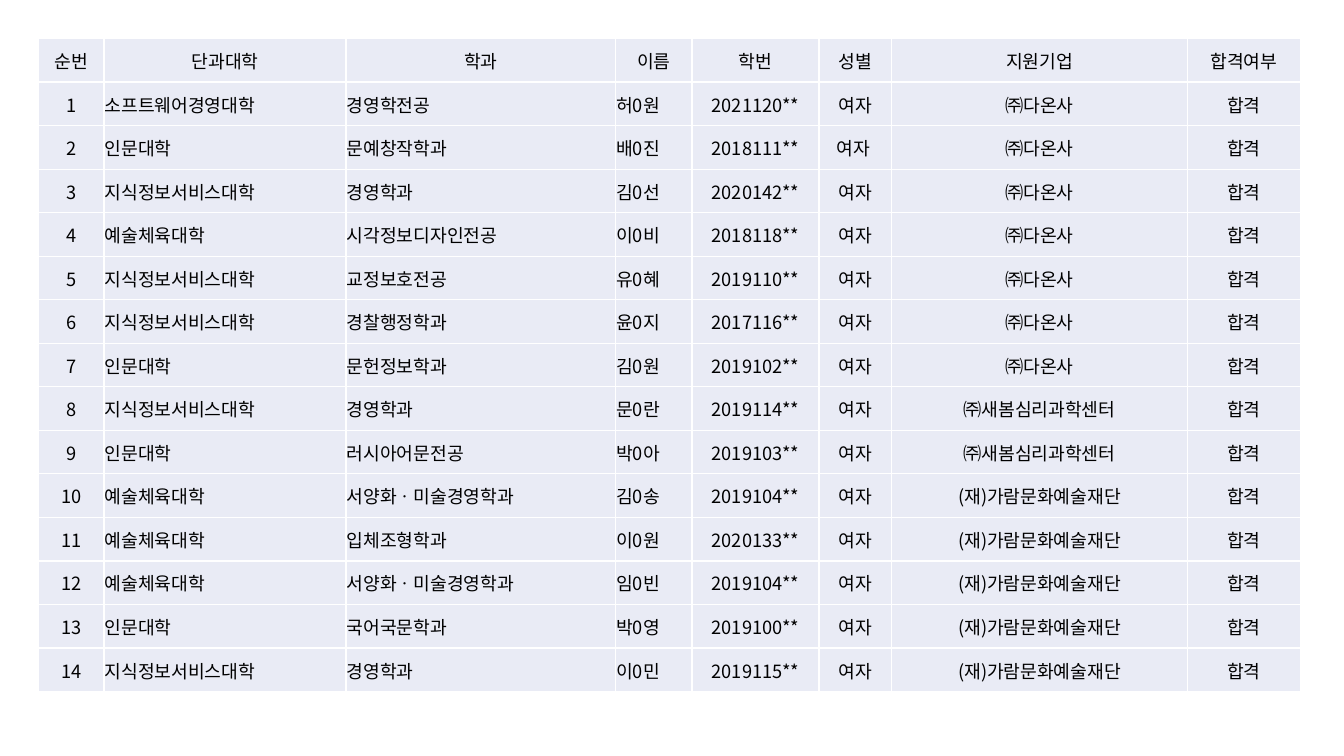
from lxml import etree
from pptx import Presentation
from pptx.dml.color import RGBColor as RGB
from pptx.enum.text import MSO_ANCHOR as Anchor, PP_ALIGN as Align
from pptx.oxml.ns import qn
from pptx.util import Cm, Pt

FONT = "Noto Sans CJK KR"
COLORS = {"cell": "E9EBF5", "text": "000000", "border": "FFFFFF"}

# Table geometry in centimetres
LEFT, TOP, HEIGHT = 0.97, 0.97, 16.46
COL_WIDTHS = [1.65, 6.1, 6.79, 1.93, 3.2, 1.83, 7.45, 2.85]
LEFT_ALIGNED = (1, 2, 3)

# Table content
HEADERS = ["순번", "단과대학", "학과", "이름", "학번", "성별", "지원기업", "합격여부"]
PRESS, CENTER, FOUNDATION = "㈜다온사", "㈜새봄심리과학센터", "(재)가람문화예술재단"
SOFTWARE, HUMANITIES = "소프트웨어경영대학", "인문대학"
SERVICE, ARTS = "지식정보서비스대학", "예술체육대학"
APPLICANTS = [
    (SOFTWARE, "경영학전공", "허0원", "2021120**", "여자", PRESS),
    (HUMANITIES, "문예창작학과", "배0진", "2018111**", "여자 ", PRESS),
    (SERVICE, "경영학과", "김0선", "2020142**", "여자", PRESS),
    (ARTS, "시각정보디자인전공", "이0비", "2018118**", "여자", PRESS),
    (SERVICE, "교정보호전공", "유0혜", "2019110**", "여자", PRESS),
    (SERVICE, "경찰행정학과", "윤0지", "2017116**", "여자", PRESS),
    (HUMANITIES, "문헌정보학과", "김0원", "2019102**", "여자", PRESS),
    (SERVICE, "경영학과", "문0란", "2019114**", "여자", CENTER),
    (HUMANITIES, "러시아어문전공", "박0아", "2019103**", "여자", CENTER),
    (ARTS, "서양화ㆍ미술경영학과", "김0송", "2019104**", "여자", FOUNDATION),
    (ARTS, "입체조형학과", "이0원", "2020133**", "여자", FOUNDATION),
    (ARTS, "서양화ㆍ미술경영학과", "임0빈", "2019104**", "여자", FOUNDATION),
    (HUMANITIES, "국어국문학과", "박0영", "2019100**", "여자", FOUNDATION),
    (SERVICE, "경영학과", "이0민", "2019115**", "여자", FOUNDATION),
]


def add_text(tf, text, size=13, color="text", align=Align.CENTER):
    p = tf.paragraphs[0]
    p.alignment = align
    r = p.add_run()
    r.text = text
    r.font.size = Pt(size)
    r.font.name = FONT
    r.font.color.rgb = RGB.from_string(COLORS[color])
    # East Asian typeface
    etree.SubElement(r.font._element, qn("a:ea"), typeface=FONT)


def set_borders(cell, color="border", width=1):
    tc_pr = cell._tc.get_or_add_tcPr()
    for i, side in enumerate(("lnL", "lnR", "lnT", "lnB")):
        ln = etree.Element(qn(f"a:{side}"), w=str(Pt(width)))
        fill = etree.SubElement(ln, qn("a:solidFill"))
        etree.SubElement(fill, qn("a:srgbClr"), val=COLORS[color])
        tc_pr.insert(i, ln)


def format_cell(cell, text, align):
    cell.fill.solid()
    cell.fill.fore_color.rgb = RGB.from_string(COLORS["cell"])
    cell.vertical_anchor = Anchor.MIDDLE
    cell.margin_left = cell.margin_right = cell.margin_top = Cm(0.02)
    cell.margin_bottom = 0
    add_text(cell.text_frame, text, align=align)
    set_borders(cell)


def add_results_table(s, rows):
    frame = s.shapes.add_table(len(rows), len(COL_WIDTHS), Cm(LEFT), Cm(TOP),
                               Cm(sum(COL_WIDTHS)), Cm(HEIGHT))
    table = frame.table
    table.first_row = table.horz_banding = False
    for col, width in zip(table.columns, COL_WIDTHS):
        col.width = Cm(width)
    for i, values in enumerate(rows):
        table.rows[i].height = Cm(HEIGHT / len(rows))
        for j, text in enumerate(values):
            is_left = i > 0 and j in LEFT_ALIGNED
            format_cell(table.cell(i, j), text, Align.LEFT if is_left else Align.CENTER)


def main():
    prs = Presentation()
    prs.slide_width, prs.slide_height = Cm(33.87), Cm(19.05)
    s = prs.slides.add_slide(prs.slide_layouts[6])
    # Every applicant is numbered and has passed
    rows = [HEADERS] + [(str(n), *a, "합격") for n, a in enumerate(APPLICANTS, 1)]
    add_results_table(s, rows)
    prs.save("out.pptx")


if __name__ == "__main__":
    main()
